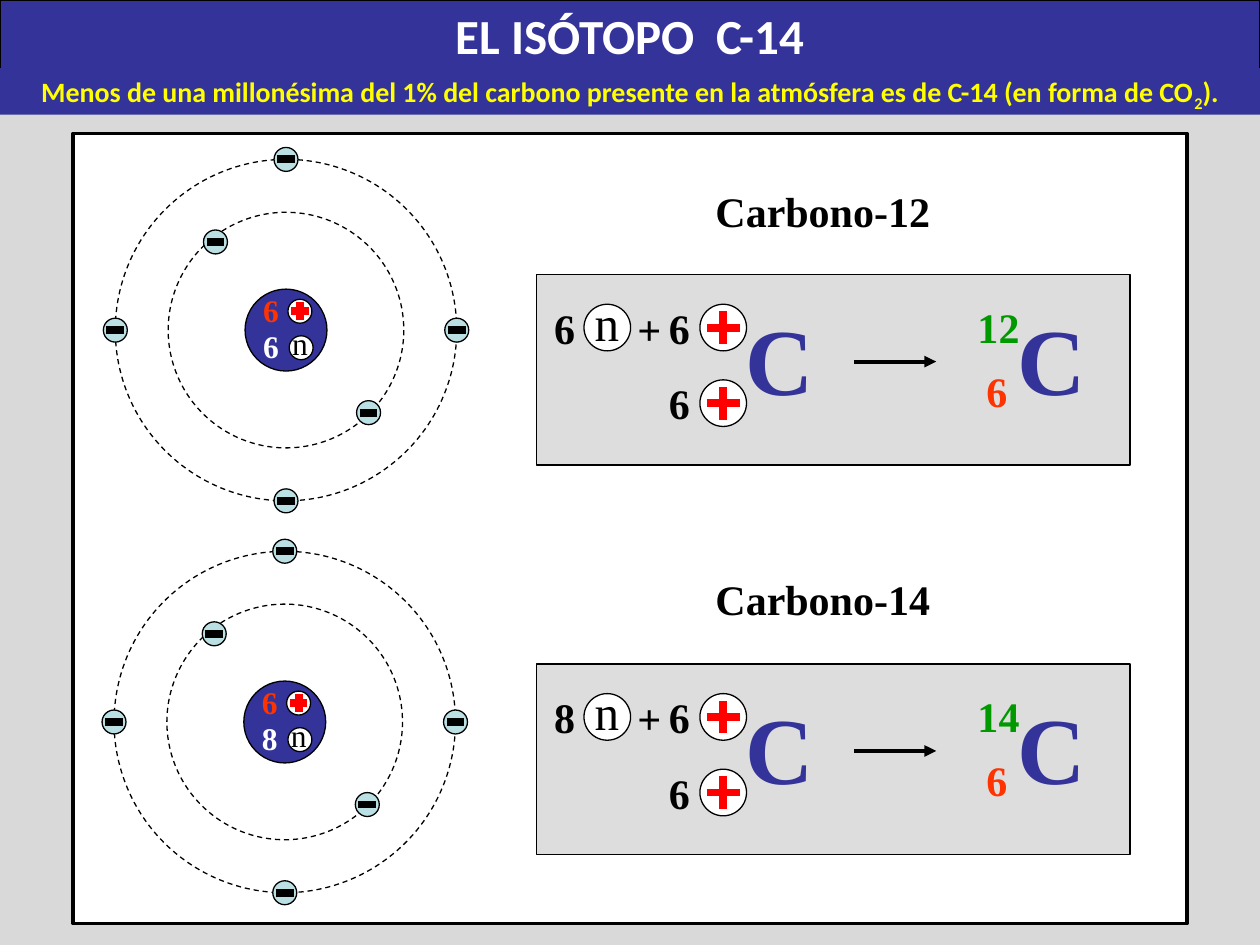
import dataclasses

import lxml.etree
import pptx
import pptx.dml.color
import pptx.enum.dml
import pptx.enum.shapes
import pptx.enum.text
import pptx.oxml.ns
import pptx.util
from pptx.util import Inches

SHAPE = pptx.enum.shapes.MSO_SHAPE
qn = pptx.oxml.ns.qn


@dataclasses.dataclass(frozen=True)
class Theme:
    """Colours, fonts and sizes in points."""
    background: str = "D9D9D9"
    panel: str = "DDDDDD"
    blue: str = "333399"
    electron: str = "BBE0E3"
    white: str = "FFFFFF"
    black: str = "000000"
    plus: str = "FF0000"
    proton: str = "FF3300"
    mass: str = "009900"
    yellow: str = "FFFF00"
    heading_font: str = "Calibri"
    body_font: str = "Times New Roman"
    small: float = 18
    body: float = 24
    neutron: float = 28
    symbol: float = 54
    title: float = 28
    subtitle: float = 16
    thin: float = 0.75
    thick: float = 4.5


THEME = Theme()


def rgb(value):
    """Return a colour object for a hexadecimal string."""
    return pptx.dml.color.RGBColor.from_string(value)


def add_box(shapes, kind, left, top, width, height, fill=None, line=THEME.thin, dash=False):
    """Add a preset shape with a black outline, or none when line is None."""
    shape = shapes.add_shape(kind, Inches(left), Inches(top), Inches(width), Inches(height))
    shape.shadow.inherit = False
    if fill:
        shape.fill.solid()
        shape.fill.fore_color.rgb = rgb(fill)
    else:
        shape.fill.background()
    if line is None:
        shape.line.fill.background()
    else:
        shape.line.color.rgb = rgb(THEME.black)
        shape.line.width = pptx.util.Pt(line)
    if dash:
        shape.line.dash_style = pptx.enum.dml.MSO_LINE.DASH
    return shape


def add_circle(shapes, x, y, diameter, fill=None, dash=False):
    """Add a circle around a centre point."""
    add_box(shapes, SHAPE.OVAL, x - diameter / 2, y - diameter / 2, diameter, diameter, fill, dash=dash)


def add_line(shapes, start, end, color, width, arrow=False):
    """Add a straight line, with an arrowhead at its end on request."""
    points = [Inches(value) for value in (*start, *end)]
    connector = shapes.add_connector(pptx.enum.shapes.MSO_CONNECTOR.STRAIGHT, *points)
    connector.line.color.rgb = rgb(color)
    connector.line.width = pptx.util.Pt(width)
    properties = connector._element.spPr
    if arrow:
        lxml.etree.SubElement(properties.find(qn("a:ln")), qn("a:tailEnd"), type="triangle")
    lxml.etree.SubElement(properties, qn("a:effectLst"))


def format_run(run, size, color, font, bold=True):
    """Apply type settings to a run."""
    run.font.size = pptx.util.Pt(size)
    run.font.name = font
    run.font.bold = bold
    run.font.color.rgb = rgb(color)


def add_text(shapes, text, left, top, width, height, size, color=THEME.black, bold=True, wrap=True):
    """Add a text box; wrapped ones have half a line of space before."""
    box = shapes.add_textbox(Inches(left), Inches(top), Inches(width), Inches(height))
    frame = box.text_frame
    frame.text = text
    frame.word_wrap = wrap
    frame.auto_size = pptx.enum.text.MSO_AUTO_SIZE.SHAPE_TO_FIT_TEXT
    paragraph = frame.paragraphs[0]
    format_run(paragraph.runs[0], size, color, THEME.body_font, bold)
    if wrap:
        spacing = lxml.etree.SubElement(paragraph._p.get_or_add_pPr(), qn("a:spcBef"))
        lxml.etree.SubElement(spacing, qn("a:spcPct"), val="50000")


def add_plus(shapes, x, y, diameter, arm):
    """Add a proton: a white circle with a red plus sign."""
    add_circle(shapes, x, y, diameter, THEME.white)
    add_line(shapes, (x - arm, y), (x + arm, y), THEME.plus, THEME.thick)
    add_line(shapes, (x, y + arm), (x, y - arm), THEME.plus, THEME.thick)


def add_atom(slide, x, y, neutrons):
    """Add a carbon atom with its shells, electrons and nucleus."""
    shapes = slide.shapes.add_group_shape().shapes
    outer = 1.355
    for diameter in (1.87, 2 * outer):
        add_circle(shapes, x, y, diameter, dash=True)
    electrons = [(0, -outer), (0, outer), (outer, 0), (-outer, 0), (-0.56, -0.7), (0.655, 0.655)]
    for dx, dy in electrons:
        add_circle(shapes, x + dx, y + dy, 0.19, THEME.electron)
        add_line(shapes, (x + dx - 0.07, y + dy), (x + dx + 0.07, y + dy), THEME.black, THEME.thick)
    add_circle(shapes, x, y, 0.65, THEME.blue)
    add_plus(shapes, x + 0.11, y - 0.15, 0.19, 0.07)
    add_circle(shapes, x + 0.12, y + 0.14, 0.19, THEME.white)
    add_text(shapes, "n", x - 0.05, y - 0.1, 0.33, 0.4, THEME.small, bold=False)
    add_text(shapes, "6", x - 0.28, y - 0.36, 0.33, 0.4, THEME.small, THEME.proton)
    add_text(shapes, neutrons, x - 0.28, y - 0.07, 0.33, 0.4, THEME.small, THEME.white)


def add_formula(slide, top, neutrons, mass):
    """Add the panel that turns particle counts into isotope notation."""
    shapes = slide.shapes.add_group_shape().shapes
    add_box(shapes, SHAPE.RECTANGLE, 4.26, top, 4.71, 1.51, THEME.panel)
    for left, width in ((5.82, 0.85), (7.98, 0.91)):
        add_text(shapes, "C", left, top + 0.16, width, 1, THEME.symbol, THEME.blue)
    add_text(shapes, mass, 7.66, top + 0.16, 0.53, 0.5, THEME.body, THEME.mass, wrap=False)
    add_text(shapes, "6", 7.73, top + 0.67, 0.37, 0.5, THEME.body, THEME.proton, wrap=False)
    add_line(shapes, (6.78, top + 0.69), (7.43, top + 0.69), THEME.black, 2.25, arrow=True)
    add_text(shapes, "+", 4.96, top + 0.18, 0.36, 0.5, THEME.body)
    for row in (top + 0.17, top + 0.77):
        add_plus(shapes, 5.74, row + 0.25, 0.37, 0.13)
        add_text(shapes, "6", 5.21, row, 0.35, 0.5, THEME.body)
    add_circle(shapes, 4.82, top + 0.42, 0.37, THEME.white)
    add_text(shapes, "n", 4.62, top + 0.09, 0.55, 0.57, THEME.neutron, bold=False)
    add_text(shapes, neutrons, 4.3, top + 0.17, 0.35, 0.5, THEME.body)


def add_banner(slide, texts, top, height, size, color, line, wrap):
    """Add a full-width blue band; a second text is set as subscript."""
    shape = add_box(slide.shapes, SHAPE.RECTANGLE, 0, top, 10, height, THEME.blue, line)
    frame = shape.text_frame
    frame.word_wrap = wrap
    if wrap:
        frame.vertical_anchor = pptx.enum.text.MSO_ANCHOR.TOP
        frame.auto_size = pptx.enum.text.MSO_AUTO_SIZE.SHAPE_TO_FIT_TEXT
    paragraph = frame.paragraphs[0]
    paragraph.alignment = pptx.enum.text.PP_ALIGN.CENTER
    for index, text in enumerate(texts):
        run = paragraph.add_run()
        run.text = text
        format_run(run, size, color, THEME.heading_font)
        if index == 1:
            run._r.get_or_add_rPr().set("baseline", "-25000")


def main():
    """Build and save the slide."""
    presentation = pptx.Presentation()
    presentation.slide_width = Inches(10)
    presentation.slide_height = Inches(7.5)
    slide = presentation.slides.add_slide(presentation.slide_layouts[6])
    slide.background.fill.solid()
    slide.background.fill.fore_color.rgb = rgb(THEME.background)
    add_box(slide.shapes, SHAPE.RECTANGLE, 0.58, 1.06, 8.84, 6.27, THEME.white, 2)
    add_banner(slide, ["EL ISÓTOPO  C-14"], 0, 0.56, THEME.title, THEME.white, THEME.thin, False)
    isotopes = [("12", "6", 2.27, 2.62, 2.18, 1.42), ("14", "8", 2.26, 5.73, 5.27, 4.5)]
    for mass, neutrons, x, y, panel_top, name_top in isotopes:
        add_atom(slide, x, y, neutrons)
        add_formula(slide, panel_top, neutrons, mass)
        add_text(slide.shapes, f"Carbono-{mass}", 5.58, name_top, 2.2, 0.5, THEME.body)
    subtitle = [
        "Menos de una millonésima del 1% del carbono presente en la atmósfera es de C-14 (en forma de CO",
        "2",
        ").",
    ]
    add_banner(slide, subtitle, 0.54, 0.37, THEME.subtitle, THEME.yellow, None, True)
    presentation.save("out.pptx")


if __name__ == "__main__":
    main()
